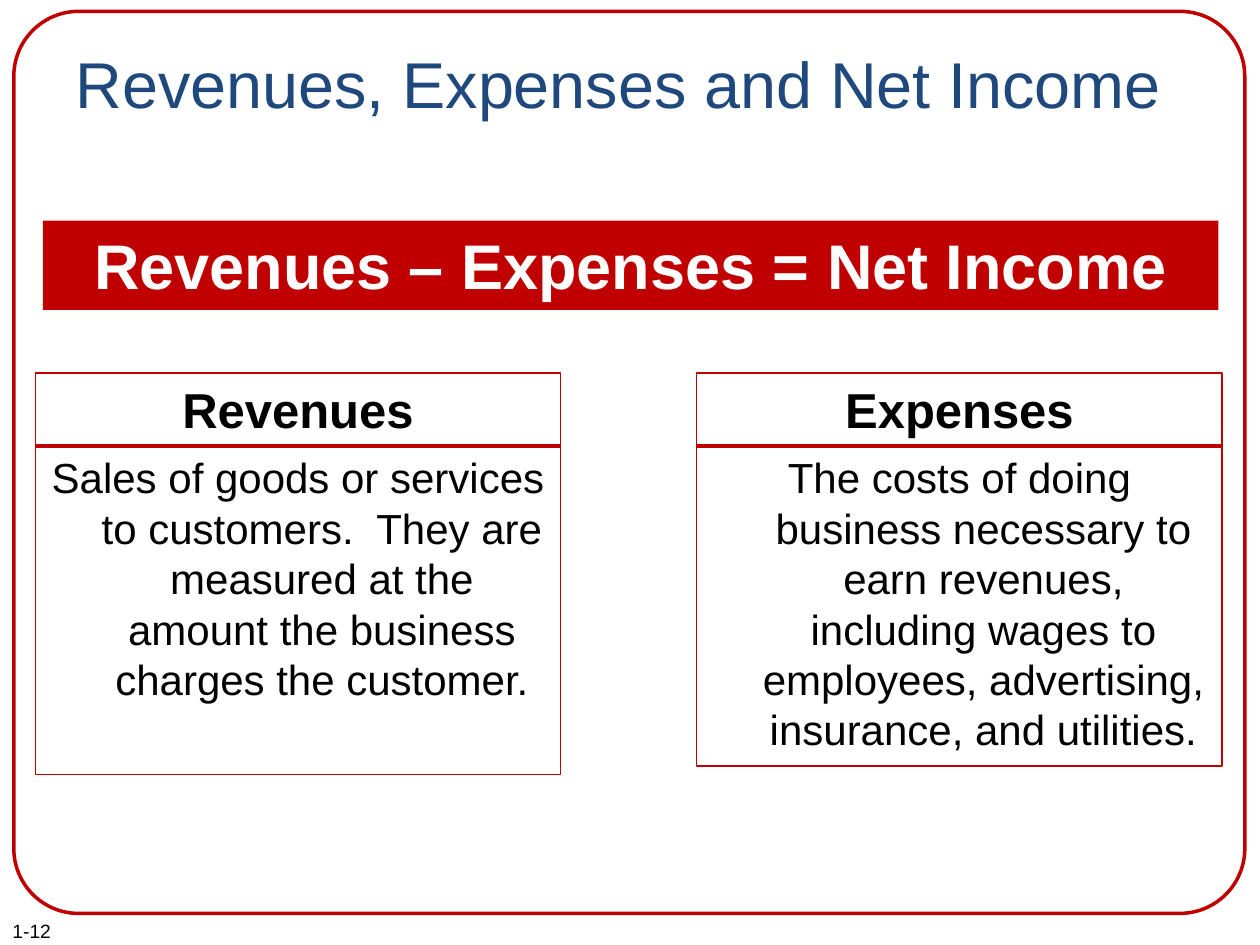
"""Build the slide on revenues, expenses and net income."""
import lxml.etree
import pptx
import pptx.dml.color
import pptx.enum.shapes
import pptx.enum.text
import pptx.oxml.ns
import pptx.util

Inches = pptx.util.Inches
Pt = pptx.util.Pt
SHAPES = pptx.enum.shapes.MSO_SHAPE
ALIGN = pptx.enum.text.PP_ALIGN
ANCHOR = pptx.enum.text.MSO_ANCHOR

TITLE = "Revenues, Expenses and Net Income"
EQUATION = "Revenues – Expenses = Net Income"
PAGE_NUMBER = "1-12"
DEFINITIONS = [
    {
        "term": "Revenues",
        "meaning": "Sales of goods or services to customers.  They are measured "
                   "at the amount the business charges the customer.",
        "left": 0.28,
        "height": 3.19,
    },
    {
        "term": "Expenses",
        "meaning": "The costs of doing business necessary to earn revenues, "
                   "including wages to employees, advertising, insurance, and utilities.",
        "left": 5.53,
        "height": 3.12,
    },
]
COLORS = {"red": "C00000", "navy": "1F497D", "black": "000000", "white": "FFFFFF"}
FONT = "Arial"
CARD_TOP, CARD_WIDTH, RULE_TOP = 2.96, 4.17, 3.54
HANGING_INDENT = 0.38


def rgb(name):
    """Return the named colour."""
    return pptx.dml.color.RGBColor.from_string(COLORS[name])


def add_run(paragraph, text, size, color, bold=False):
    """Append a formatted run to a paragraph."""
    run = paragraph.add_run()
    run.text = text
    run.font.name = FONT
    run.font.size = Pt(size)
    run.font.bold = bold
    run.font.color.rgb = rgb(color)


def add_box(shapes, kind, box, fill=None, line_width=None):
    """Add a flat shape with an optional fill and red outline."""
    shape = shapes.add_shape(kind, *map(Inches, box))
    shape.shadow.inherit = False
    if fill:
        shape.fill.solid()
        shape.fill.fore_color.rgb = rgb(fill)
    else:
        shape.fill.background()
    if line_width:
        shape.line.color.rgb = rgb("red")
        shape.line.width = Pt(line_width)
    else:
        shape.line.fill.background()
    shape.text_frame.word_wrap = True
    return shape


def add_rule(shapes, left, top, width):
    """Add a horizontal red line."""
    rule = shapes.add_connector(
        pptx.enum.shapes.MSO_CONNECTOR.STRAIGHT,
        Inches(left), Inches(top), Inches(left + width), Inches(top))
    rule.line.color.rgb = rgb("red")
    rule.line.width = Pt(2.25)
    lxml.etree.SubElement(rule._element.spPr, pptx.oxml.ns.qn("a:effectLst"))


def format_card_paragraph(paragraph):
    """Centre a paragraph and give it a hanging indent."""
    paragraph.alignment = ALIGN.CENTER
    properties = paragraph._p.get_or_add_pPr()
    properties.set("marL", str(Inches(HANGING_INDENT)))
    properties.set("indent", str(-Inches(HANGING_INDENT)))


def add_definition(slide, definition):
    """Add a grouped card with a term, a rule and its meaning."""
    group = slide.shapes.add_group_shape()
    left = definition["left"]
    card = add_box(group.shapes, SHAPES.RECTANGLE,
                   (left, CARD_TOP, CARD_WIDTH, definition["height"]), "white", 0.75)
    frame = card.text_frame
    frame.vertical_anchor = ANCHOR.TOP
    term, meaning = frame.paragraphs[0], frame.add_paragraph()
    for paragraph in (term, meaning):
        format_card_paragraph(paragraph)
    meaning.space_before = Pt(8)
    add_run(term, definition["term"], 28, "black", bold=True)
    add_run(meaning, definition["meaning"], 24, "black")
    add_rule(group.shapes, left, RULE_TOP, CARD_WIDTH)


def main():
    """Build and save the presentation."""
    presentation = pptx.Presentation()
    presentation.slide_width, presentation.slide_height = Inches(10), Inches(7.5)
    slide = presentation.slides.add_slide(presentation.slide_layouts[5])

    border = add_box(slide.shapes, SHAPES.ROUNDED_RECTANGLE,
                     (0.11, 0.09, 9.77, 7.16), line_width=2)
    border.adjustments[0] = 0.072

    page = slide.shapes.add_textbox(Inches(0), Inches(7.25), Inches(1.42), Inches(0.29))
    page.text_frame.word_wrap = True
    add_run(page.text_frame.paragraphs[0], PAGE_NUMBER, 11, "black")

    title = slide.shapes.title
    title.left, title.top, title.width, title.height = map(Inches, (0.5, 0.3, 9, 1.25))
    title.text_frame.vertical_anchor = ANCHOR.TOP
    title.text_frame.paragraphs[0].alignment = ALIGN.LEFT
    add_run(title.text_frame.paragraphs[0], TITLE, 37, "navy")

    for definition in DEFINITIONS:
        add_definition(slide, definition)

    banner = add_box(slide.shapes, SHAPES.RECTANGLE, (0.34, 1.75, 9.33, 0.71), "red")
    banner.text_frame.vertical_anchor = ANCHOR.TOP
    banner.text_frame.paragraphs[0].alignment = ALIGN.CENTER
    add_run(banner.text_frame.paragraphs[0], EQUATION, 36, "white", bold=True)

    presentation.save("out.pptx")


if __name__ == "__main__":
    main()
